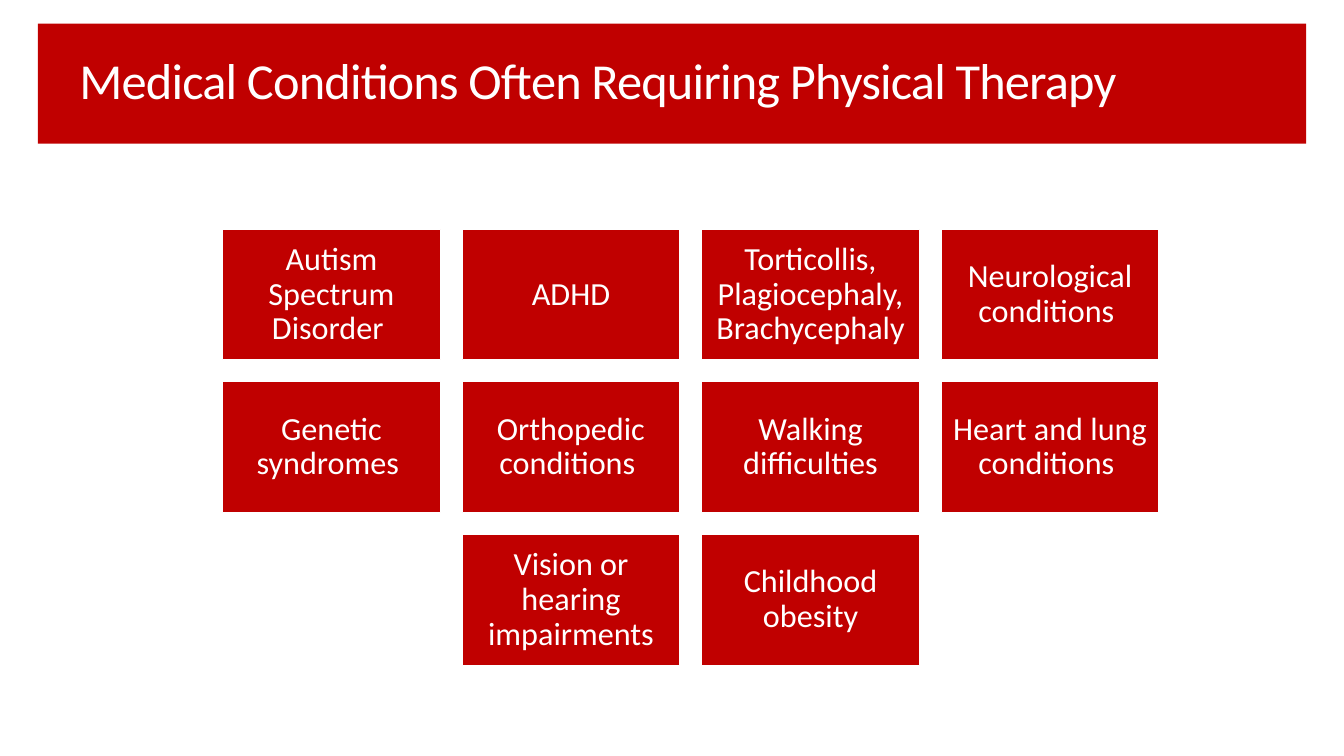
from pptx import Presentation
from pptx.dml.color import RGBColor
from pptx.enum.shapes import MSO_SHAPE as Shape
from pptx.enum.text import MSO_ANCHOR as Anchor, PP_ALIGN as Align
from pptx.util import Pt

RED = RGBColor(0xC0, 0x00, 0x00)
WHITE = RGBColor(0xFF, 0xFF, 0xFF)
FONT = "Calibri"

TITLE = "Medical Conditions Often Requiring Physical Therapy"
CONDITIONS = [
    "Autism Spectrum Disorder ",
    "ADHD",
    "Torticollis, Plagiocephaly, Brachycephaly",
    "Neurological conditions ",
    "Genetic syndromes ",
    "Orthopedic conditions ",
    "Walking difficulties",
    "Heart and lung conditions ",
    "Vision or hearing impairments",
    "Childhood obesity",
]
COLUMNS = 4
GAP = 15.6


def set_attributes(target, values):
    for name, value in values.items():
        setattr(target, name, value)


def add_red_box(slide, left, top, width, height):
    shape = slide.shapes.add_shape(
        Shape.RECTANGLE, Pt(left), Pt(top), Pt(width), Pt(height))
    shape.shadow.inherit = False
    shape.fill.solid()
    shape.fill.fore_color.rgb = RED
    return shape


def write_text(shape, text, size, align, margin_x, margin_y):
    """Fill the shape with one white, vertically centred paragraph."""
    frame = shape.text_frame
    set_attributes(frame, {
        "word_wrap": True, "vertical_anchor": Anchor.MIDDLE,
        "margin_left": Pt(margin_x), "margin_right": Pt(margin_x),
        "margin_top": Pt(margin_y), "margin_bottom": Pt(margin_y),
    })
    paragraph = frame.paragraphs[0]
    set_attributes(paragraph, {"alignment": align, "line_spacing": 0.9})
    run = paragraph.add_run()
    run.text = text
    set_attributes(run.font, {"name": FONT, "size": Pt(size)})
    run.font.color.rgb = WHITE
    return run


def add_title_banner(slide, left, top, width, height):
    banner = add_red_box(slide, left, top, width, height)
    banner.line.fill.background()
    title = slide.shapes.add_textbox(
        Pt(left + 22.6), Pt(top + 6.9), Pt(831), Pt(71.3))
    run = write_text(title, TITLE, 36, Align.LEFT, 7.2, 3.6)
    run.font._element.set("spc", "-60")


def add_condition_grid(slide, left, top, width, height):
    """Lay the conditions out in rows, each row centred in the box."""
    rows = [CONDITIONS[start:start + COLUMNS]
            for start in range(0, len(CONDITIONS), COLUMNS)]
    card_width = (width - (COLUMNS - 1) * GAP) / COLUMNS
    card_height = (height - (len(rows) - 1) * GAP) / len(rows)
    step_x, step_y = card_width + GAP, card_height + GAP
    for row_number, row in enumerate(rows):
        row_left = left + (COLUMNS - len(row)) * step_x / 2
        for column, condition in enumerate(row):
            card = add_red_box(slide, row_left + column * step_x,
                               top + row_number * step_y,
                               card_width, card_height)
            card.line.color.rgb = WHITE
            card.line.width = Pt(0.85)
            write_text(card, condition, 23, Align.CENTER, 6.9, 6.9)


def main():
    presentation = Presentation()
    set_attributes(presentation,
                   {"slide_width": Pt(960), "slide_height": Pt(540)})
    slide = presentation.slides.add_slide(presentation.slide_layouts[6])
    add_title_banner(slide, 27.1, 16.9, 905.8, 85.7)
    add_condition_grid(slide, 159.1, 163.7, 668.8, 311.4)
    presentation.save("out.pptx")


if __name__ == "__main__":
    main()
